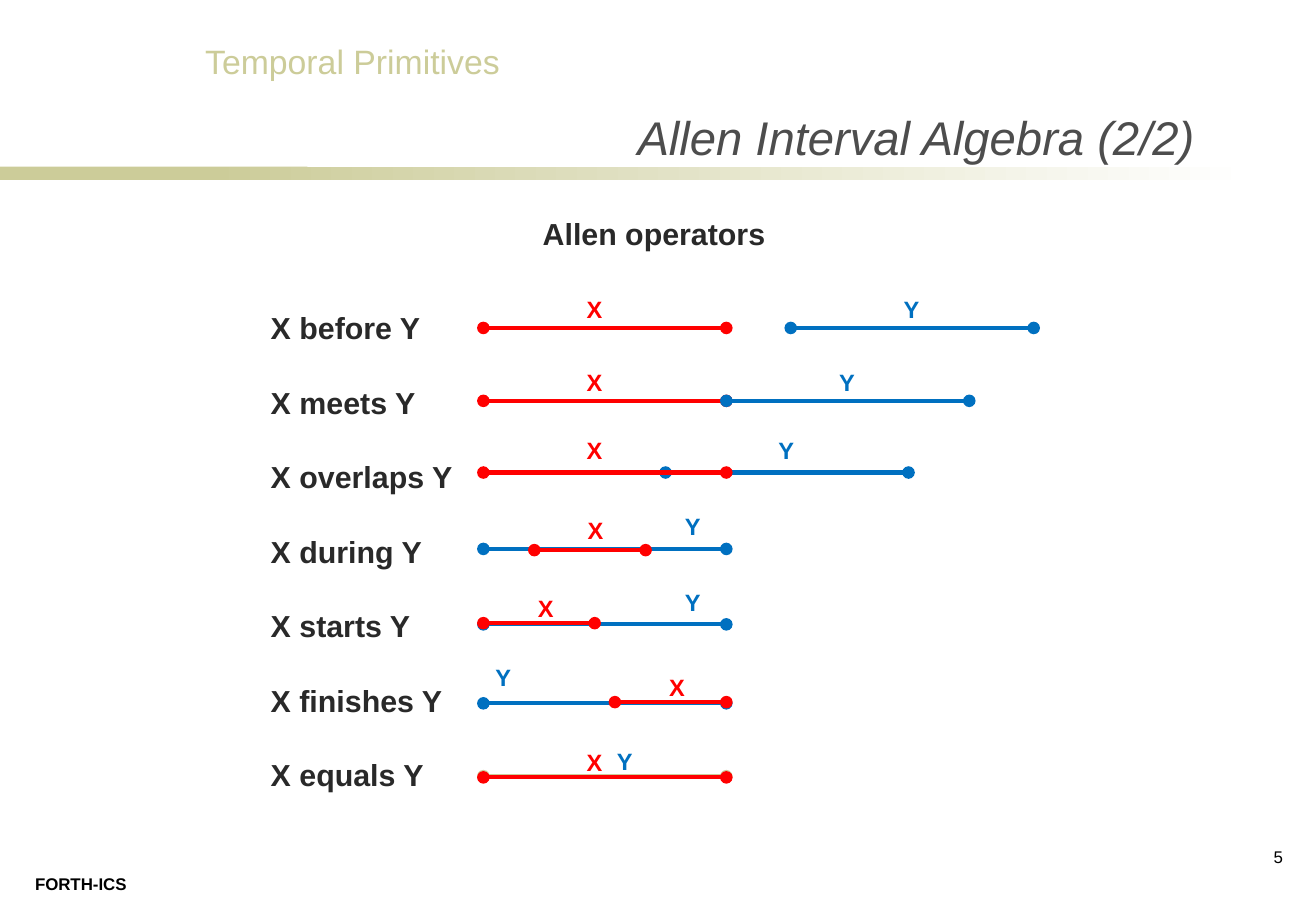
"""Build the Allen interval algebra slide."""
from dataclasses import dataclass
from typing import Any

from lxml import etree
from pptx import Presentation
from pptx import util as u
from pptx.dml.color import RGBColor
from pptx.enum import shapes, text
from pptx.oxml import ns

Pt = u.Pt
SAND = RGBColor(0xCC, 0xCC, 0x99)
WHITE = RGBColor(0xFF, 0xFF, 0xFF)
BLACK = RGBColor(0, 0, 0)
GREY = RGBColor(0x4D, 0x4D, 0x4D)
INK = RGBColor(0x29, 0x29, 0x29)
RED = RGBColor(0xFF, 0, 0)
BLUE = RGBColor(0, 0x70, 0xC0)

START = 286.5
LONG = 144
SHORT = 66
ROW_PITCH = 43.2
OPERATOR_SIZE = 18
OPERATOR_LINE = 20.7
OPERATORS = ("before", "meets", "overlaps", "during", "starts", "finishes", "equals")


@dataclass(frozen=True)
class Caption:
    lines: tuple[str, ...]
    left: float
    top: float
    width: float
    height: float
    size: float
    color: RGBColor
    bold: bool = False
    italic: bool = False
    align: Any = text.PP_ALIGN.LEFT
    anchor: Any = text.MSO_ANCHOR.TOP
    wrap: bool = False
    gap: float = 0


@dataclass(frozen=True)
class Interval:
    name: str
    left: float
    y: float
    length: float
    label_left: float
    label_top: float
    line_color: RGBColor | None = None

    @property
    def color(self) -> RGBColor:
        return RED if self.name == "X" else BLUE


CAPTIONS = (
    Caption(("Temporal Primitives",), 114.5, 20.9, 190.8, 31.7, 20, SAND),
    Caption(("FORTH-ICS",), 13.7, 514.1, 69.8, 19.4, 10, BLACK, bold=True),
    Caption(("Allen Interval Algebra (2/2)",), 151.9, 56.2, 563, 45.4, 28, GREY,
            italic=True, align=text.PP_ALIGN.RIGHT,
            anchor=text.MSO_ANCHOR.BOTTOM, wrap=True),
    Caption(("5",), 732.2, 498.2, 35.3, 30.2, 10, BLACK,
            align=text.PP_ALIGN.RIGHT, wrap=True),
    Caption(tuple(f"X {name} Y" for name in OPERATORS), 153.4, 180, 473, 290.9,
            OPERATOR_SIZE, INK, bold=True, wrap=True, gap=ROW_PITCH - OPERATOR_LINE),
    Caption(("Allen operators",), 314.6, 123.8, 151.2, 28.8, 18, INK,
            bold=True, wrap=True),
)

INTERVALS = (
    Interval("X", START, 194.4, LONG, 340.6, 171.4),
    Interval("Y", 468.7, 194.4, LONG, 528.5, 171.4),
    Interval("X", START, 237.6, LONG, 340.6, 214.6),
    Interval("Y", START + LONG, 237.6, LONG, 490.3, 214.6),
    Interval("Y", 394.5, 280.1, LONG, 454.3, 254.9),
    Interval("X", START, 280.1, LONG, 340.6, 254.9),
    Interval("Y", START, 325.4, LONG, 398.9, 300.2),
    Interval("X", 316.7, 326.1, SHORT, 341.3, 302.4),
    Interval("Y", START, 370.1, LONG, 398.9, 344.9),
    Interval("X", START, 369.4, SHORT, 311.8, 348.5),
    Interval("Y", START, 416.9, LONG, 286.6, 389.5),
    Interval("X", START + LONG - SHORT, 416.2, SHORT, 389.5, 395.3),
    Interval("Y", START, 460.1, LONG, 358.6, 439.2, SAND),
    Interval("X", START, 460.8, LONG, 340.6, 439.9),
)


def set_all(target: Any, values: dict[str, Any]) -> None:
    for name, value in values.items():
        setattr(target, name, value)


def add_caption(page: Any, caption: Caption) -> None:
    box = page.shapes.add_textbox(Pt(caption.left), Pt(caption.top),
                                  Pt(caption.width), Pt(caption.height))
    frame = box.text_frame
    set_all(frame, {"word_wrap": caption.wrap, "vertical_anchor": caption.anchor})
    for index, line in enumerate(caption.lines):
        para = frame.add_paragraph() if index else frame.paragraphs[0]
        para.alignment = caption.align
        if index:
            para.space_before = Pt(caption.gap)
        span = para.add_run()
        span.text = line
        set_all(span.font, {"name": "Arial", "size": Pt(caption.size),
                            "bold": caption.bold, "italic": caption.italic})
        span.font.color.rgb = caption.color


def add_interval(page: Any, interval: Interval) -> None:
    connector = page.shapes.add_connector(
        shapes.MSO_CONNECTOR.STRAIGHT, Pt(interval.left), Pt(interval.y),
        Pt(interval.left + interval.length), Pt(interval.y))
    connector.line.width = Pt(2.5)
    connector.line.color.rgb = interval.line_color or interval.color
    properties = connector._element.spPr
    outline = properties.find(ns.qn("a:ln"))
    for end in ("a:headEnd", "a:tailEnd"):
        etree.SubElement(outline, ns.qn(end), type="oval")
    etree.SubElement(properties, ns.qn("a:effectLst"))
    add_caption(page, Caption((interval.name,), interval.label_left,
                              interval.label_top, 23.8, 24.5, 14,
                              interval.color, bold=True))


def add_band(page: Any, left: float, width: float, fade: bool) -> None:
    band = page.shapes.add_shape(shapes.MSO_SHAPE.RECTANGLE, Pt(left), Pt(98.8),
                                 Pt(width), Pt(7.9))
    band.shadow.inherit = False
    band.line.fill.background()
    if fade:
        band.fill.gradient()
        band.fill.gradient_angle = 0
        for stop, color in zip(band.fill.gradient_stops, (SAND, WHITE)):
            stop.color.rgb = color
    else:
        band.fill.solid()
        band.fill.fore_color.rgb = SAND


def main() -> None:
    deck = Presentation()
    set_all(deck, {"slide_width": Pt(780), "slide_height": Pt(540)})
    page = deck.slides.add_slide(deck.slide_layouts[6])
    add_band(page, 0, 182.2, False)
    add_band(page, 123.8, 617.8, True)
    for caption in CAPTIONS:
        add_caption(page, caption)
    for interval in INTERVALS:
        add_interval(page, interval)
    deck.save("out.pptx")


if __name__ == "__main__":
    main()
